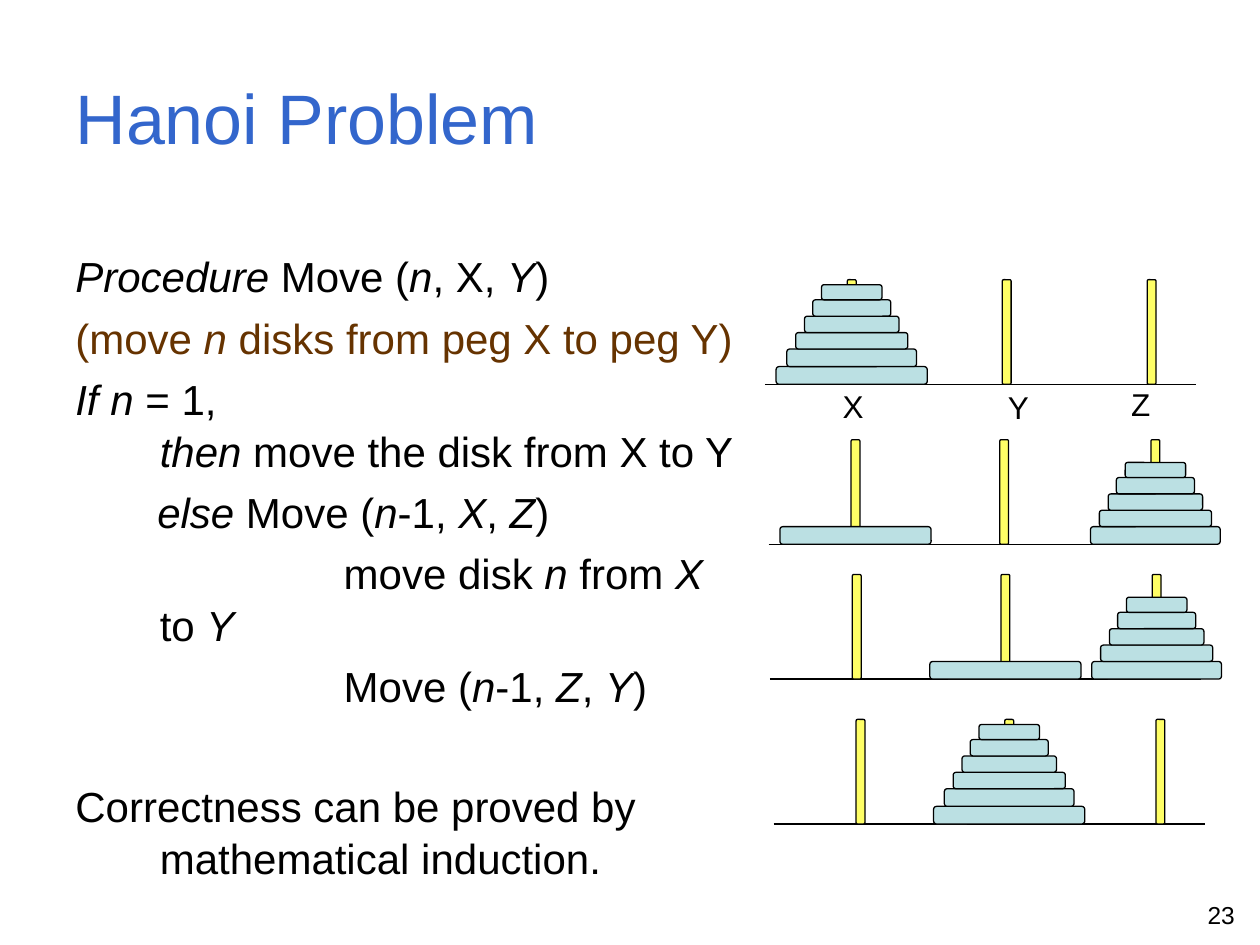
"""Build the Hanoi Problem slide: the recursive procedure beside four stages of the puzzle."""
from lxml import etree
from pptx import Presentation
from pptx.dml.color import RGBColor
from pptx.enum import shapes, text
from pptx.oxml import ns
from pptx.util import Inches, Pt

BLACK = RGBColor(0x00, 0x00, 0x00)
BLUE = RGBColor(0x33, 0x66, 0xCC)
BROWN = RGBColor(0x66, 0x33, 0x00)
PEG_YELLOW = RGBColor(0xFF, 0xFF, 0x66)
DISK_TEAL = RGBColor(0xBB, 0xE0, 0xE3)

FONT = "Arial"
BASE_LENGTH = 3.42
PEG_WIDTH, PEG_HEIGHT = 0.07, 0.83
PEG_OFFSETS = (0.69, 1.87, 3.07)
FIRST_PEG_OFFSETS = (0.69, 1.92, 3.07)

DISKS = [(1.2, 0.14), (1.03, 0.14), (0.89, 0.13), (0.75, 0.13), (0.62, 0.13), (0.48, 0.12)]
LARGEST, SMALLER = DISKS[:1], DISKS[1:]

STAGES = [
    (6.07, 3.05, FIRST_PEG_OFFSETS, (DISKS, [], [])),
    (6.10, 4.32, PEG_OFFSETS, (LARGEST, [], SMALLER)),
    (6.11, 5.39, PEG_OFFSETS, ([], LARGEST, SMALLER)),
    (6.14, 6.54, PEG_OFFSETS, ([], DISKS, [])),
]
PEG_LABELS = [("X", 6.59, 3.02), ("Y", 7.9, 3.03), ("Z", 8.88, 3.01)]

HANGING = (0.67, -0.67)
ELSE_BRANCH = (0.65, 0)
NESTED = (0.67, 1.46)
PROCEDURE = [
    ("*Procedure* Move (*n*, X, *Y*)", HANGING, BLACK, 5.3),
    ("(move *n* disks from peg X to peg Y)", HANGING, BROWN, 5.3),
    ("*If n *= 1,\n*then* move the disk from X to Y", HANGING, BLACK, 5.3),
    ("*else* Move (*n*-1, *X*, *Z*)", ELSE_BRANCH, BLACK, 5.3),
    ("move disk *n* from *X* to *Y*", NESTED, BLACK, 5.3),
    ("Move (*n*-1, *Z*, *Y*)", NESTED, BLACK, 5.3),
    ("Correctness can be proved by mathematical induction.", HANGING, BLACK, 39),
]


def style_paragraph(paragraph, size, color, alignment=text.PP_ALIGN.LEFT):
    """Set the font and alignment of a paragraph."""
    paragraph.font.name = FONT
    paragraph.font.size = Pt(size)
    paragraph.font.color.rgb = color
    paragraph.alignment = alignment


def add_marked_text(paragraph, marked):
    """Fill a paragraph, with asterisks toggling italics and newlines breaking lines."""
    for index, piece in enumerate(marked.split("*")):
        for line_number, line in enumerate(piece.split("\n")):
            if line_number:
                paragraph.add_line_break()
            if line:
                run = paragraph.add_run()
                run.text = line
                if index % 2:
                    run.font.italic = True


def add_title(slide, title_text):
    """Place and format the slide title."""
    title = slide.shapes.title
    title.left, title.top = Inches(0.5), Inches(0.3)
    title.width, title.height = Inches(9), Inches(1.25)
    title.text_frame.text = title_text
    title.text_frame.vertical_anchor = text.MSO_ANCHOR.MIDDLE
    style_paragraph(title.text_frame.paragraphs[0], 40, BLUE)


def add_label(slide, label, left, top, width, height, size, alignment=text.PP_ALIGN.LEFT):
    """Add a short one-line text box."""
    box = slide.shapes.add_textbox(Inches(left), Inches(top), Inches(width), Inches(height))
    box.text_frame.text = label
    style_paragraph(box.text_frame.paragraphs[0], size, BLACK, alignment)


def add_procedure(slide):
    """Add the procedure text with its indents and italics."""
    box = slide.shapes.add_textbox(Inches(0.5), Inches(1.93), Inches(5.5), Inches(4.81))
    frame = box.text_frame
    frame.word_wrap = True
    for index, (marked, (margin, indent), color, space) in enumerate(PROCEDURE):
        paragraph = frame.add_paragraph() if index else frame.paragraphs[0]
        add_marked_text(paragraph, marked)
        style_paragraph(paragraph, 24, color)
        paragraph.space_before = Pt(space)
        paragraph.line_spacing = 1.03
        properties = paragraph._p.get_or_add_pPr()
        properties.set("marL", str(Inches(margin)))
        properties.set("indent", str(Inches(indent)))


def add_bar(slide, center, top, width, height, color):
    """Add a rounded, outlined bar centred on a horizontal position."""
    bar = slide.shapes.add_shape(
        shapes.MSO_SHAPE.ROUNDED_RECTANGLE,
        Inches(center - width / 2), Inches(top), Inches(width), Inches(height))
    bar.shadow.inherit = False
    bar.fill.solid()
    bar.fill.fore_color.rgb = color
    bar.line.color.rgb = BLACK
    bar.line.width = Pt(0.75)


def add_base(slide, left, base):
    """Add the ground line of a stage."""
    line = slide.shapes.add_connector(
        shapes.MSO_CONNECTOR.STRAIGHT,
        Inches(left), Inches(base), Inches(left + BASE_LENGTH), Inches(base))
    line.line.color.rgb = BLACK
    line.line.width = Pt(0.75)
    etree.SubElement(line._element.spPr, ns.qn("a:effectLst"))


def add_stage(slide, left, base, peg_offsets, stacks):
    """Add one stage: ground line, three pegs and the disks on each."""
    add_base(slide, left, base)
    for offset, stack in zip(peg_offsets, stacks):
        center = left + offset
        add_bar(slide, center, base - PEG_HEIGHT, PEG_WIDTH, PEG_HEIGHT, PEG_YELLOW)
        top = base
        for width, height in stack:
            top -= height
            add_bar(slide, center, top, width, height, DISK_TEAL)


def main():
    """Create and save the presentation."""
    presentation = Presentation()
    presentation.slide_width, presentation.slide_height = Inches(10), Inches(7.5)
    slide = presentation.slides.add_slide(presentation.slide_layouts[5])
    add_title(slide, "Hanoi Problem")
    add_procedure(slide)
    for stage in STAGES:
        add_stage(slide, *stage)
    for label, left, top in PEG_LABELS:
        add_label(slide, label, left, top, 0.37, 0.4, 18)
    add_label(slide, "23", 7.57, 7.09, 2.33, 0.31, 14, text.PP_ALIGN.RIGHT)
    presentation.save("out.pptx")


if __name__ == "__main__":
    main()
